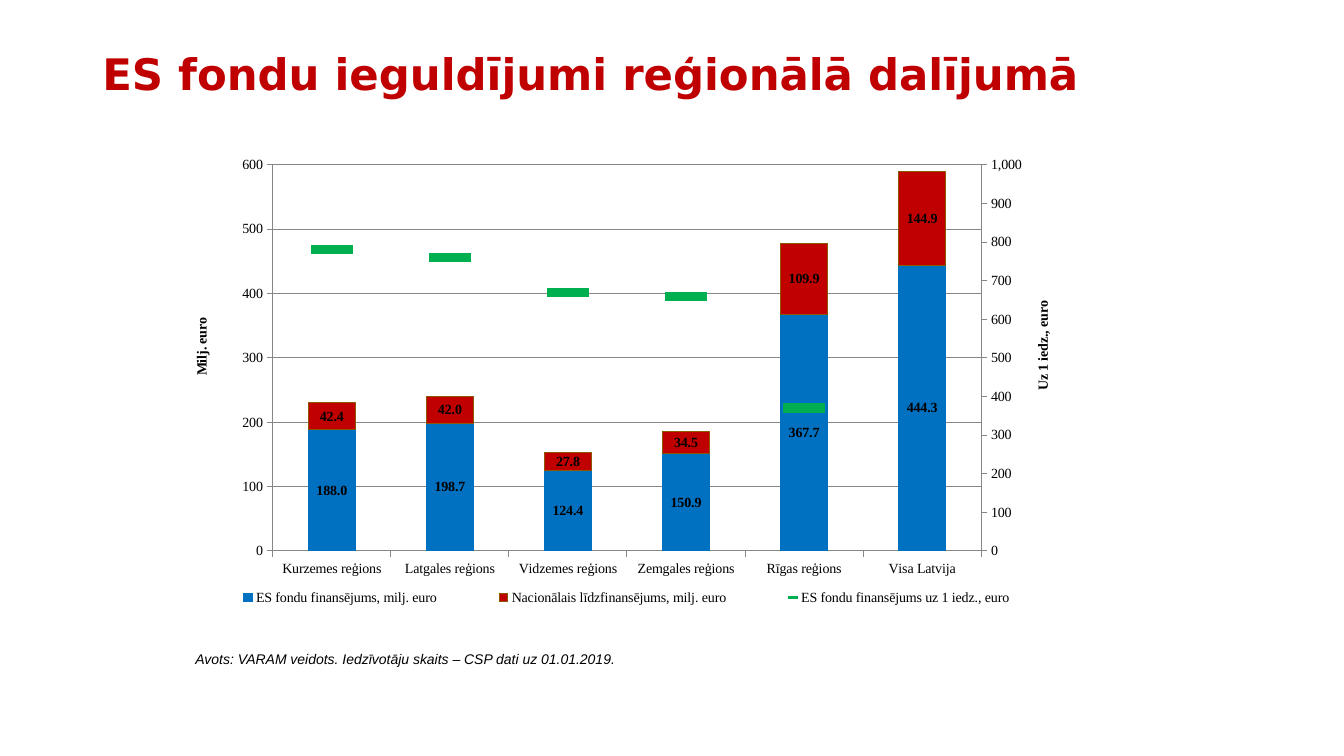
from copy import deepcopy
from dataclasses import dataclass

from lxml import etree
from pptx import Presentation
from pptx.chart import axis as ax
from pptx.chart.data import CategoryChartData
from pptx.dml.color import RGBColor
from pptx.enum import chart as ch, text
from pptx.oxml import parse_xml
from pptx.oxml.ns import nsdecls, qn
from pptx.util import Pt


@dataclass(frozen=True)
class Theme:
    red: RGBColor = RGBColor(0xC0, 0x00, 0x00)
    blue: RGBColor = RGBColor(0x00, 0x70, 0xC0)
    green: RGBColor = RGBColor(0x00, 0xB0, 0x50)
    brown: RGBColor = RGBColor(0x8B, 0x5A, 0x00)
    grey: RGBColor = RGBColor(0x86, 0x86, 0x86)
    black: RGBColor = RGBColor(0x00, 0x00, 0x00)
    title_size: int = 31
    body_size: int = 10
    title_font: str = "DejaVu Sans"
    chart_font: str = "Times New Roman"
    note_font: str = "Arial"


theme = Theme()
CHART_W, CHART_H = 630, 338


def write(tf, content, *, font, size=theme.body_size, color=theme.black,
          bold=False, italic=False, spacing=None):
    p = tf.paragraphs[0]
    p.line_spacing = spacing
    r = p.add_run()
    r.text = content
    r.font.name, r.font.size = font, Pt(size)
    r.font.bold, r.font.italic = bold, italic
    r.font.color.rgb = color


def place(element, index, **points):
    """Fix a chart part, in points within the chart; index is the layout's child position."""
    for old in element.findall(qn("c:layout")):
        element.remove(old)
    layout = etree.Element(qn("c:layout"))
    manual = etree.SubElement(layout, qn("c:manualLayout"))
    if element.tag == qn("c:plotArea"):
        etree.SubElement(manual, qn("c:layoutTarget"), val="inner")
    for mode in ("xMode", "yMode"):
        etree.SubElement(manual, qn(f"c:{mode}"), val="edge")
    for name, value in points.items():
        whole = CHART_W if name in "xw" else CHART_H
        etree.SubElement(manual, qn(f"c:{name}"), val=str(value / whole))
    element.insert(index, layout)


prs = Presentation()
prs.slide_width, prs.slide_height = Pt(960), Pt(540)
s = prs.slides.add_slide(prs.slide_layouts[6])

# Title and source note
title = s.shapes.add_textbox(Pt(66), Pt(29), Pt(828), Pt(104)).text_frame
title.margin_top = Pt(9)
note = s.shapes.add_textbox(Pt(132.5), Pt(461), Pt(362), Pt(32)).text_frame
for tf in (title, note):
    tf.word_wrap = True
    tf.vertical_anchor = text.MSO_ANCHOR.TOP
write(title, "ES fondu ieguldījumi reģionālā dalījumā", font=theme.title_font,
      size=theme.title_size, color=theme.red, bold=True, spacing=0.9)
write(note, "Avots: VARAM veidots. Iedzīvotāju skaits – CSP dati uz 01.01.2019.",
      font=theme.note_font, italic=True)

# Chart data
data = CategoryChartData(number_format="#,##0.0")
data.categories = ["Kurzemes reģions", "Latgales reģions", "Vidzemes reģions",
                   "Zemgales reģions", "Rīgas reģions", "Visa Latvija"]
data.add_series("ES fondu finansējums, milj. euro",
                [188.0, 198.7, 124.4, 150.9, 367.7, 444.3])
data.add_series("Nacionālais līdzfinansējums, milj. euro",
                [42.4, 42.0, 27.8, 34.5, 109.9, 144.9])
data.add_series("ES fondu finansējums uz 1 iedz., euro",
                [780, 760, 670, 660, 370, None])
chart = s.shapes.add_chart(ch.XL_CHART_TYPE.COLUMN_STACKED, Pt(132.5), Pt(105),
                           Pt(CHART_W), Pt(CHART_H), data).chart
chart.has_title = False
chart.font.name, chart.font.size = theme.chart_font, Pt(theme.body_size)
chart.font.color.rgb = theme.black

# Stacked columns
columns = chart.plots[0]
columns.gap_width, columns.overlap = 150, 100
columns.vary_by_categories = False
for series, fill, edge in zip(columns.series, (theme.blue, theme.red),
                              (theme.blue, theme.brown)):
    series.format.fill.solid()
    series.format.fill.fore_color.rgb = fill
    series.format.line.color.rgb = edge
    series.format.line.width = Pt(0.75)
    labels = series.data_labels
    labels.show_value = True
    labels.number_format, labels.number_format_is_linked = "#,##0.0", False
    labels.position = ch.XL_LABEL_POSITION.CENTER
    labels.font.bold = True
    labels.font.size, labels.font.name = Pt(theme.body_size), theme.chart_font
    labels.font.color.rgb = theme.black

# Secondary axes, made from the primary pair
plot_area = chart.element.find(".//" + qn("c:plotArea"))
bar = plot_area.find(qn("c:barChart"))
cat_xml, val_xml = plot_area.find(qn("c:catAx")), plot_area.find(qn("c:valAx"))
cat2_xml, val2_xml = deepcopy(cat_xml), deepcopy(val_xml)
for element, own, other in ((cat2_xml, "5001", "5002"), (val2_xml, "5002", "5001")):
    element.find(qn("c:axId")).set("val", own)
    element.find(qn("c:crossAx")).set("val", other)
val2_xml.find(qn("c:axPos")).set("val", "r")
val2_xml.find(qn("c:crosses")).set("val", "max")
val_xml.addnext(val2_xml)
val2_xml.addnext(cat2_xml)
ax.CategoryAxis(cat2_xml).visible = False

# Funding per inhabitant as dash markers on the right axis
line = parse_xml(f'<c:lineChart {nsdecls("c")}><c:grouping val="standard"/>'
                 '<c:varyColors val="0"/><c:marker val="1"/>'
                 '<c:axId val="5001"/><c:axId val="5002"/></c:lineChart>')
per_head = bar.findall(qn("c:ser"))[2]
for extra in per_head.findall(qn("c:invertIfNegative")):
    per_head.remove(extra)
line.insert(2, per_head)
bar.addnext(line)
dashes = chart.plots[1].series[0]
dashes.smooth = False
dashes.format.line.fill.background()
dashes.marker.style, dashes.marker.size = ch.XL_MARKER_STYLE.DASH, 29
dashes.marker.format.fill.solid()
dashes.marker.format.fill.fore_color.rgb = theme.green
dashes.marker.format.line.fill.background()

# Axes
left, right = ax.ValueAxis(val_xml), ax.ValueAxis(val2_xml)
for axis, name, top, fmt, x, y in (
        (left, "Milj. euro", 600, "0", 3, 120),
        (right, "Uz 1 iedz., euro", 1000, "#,##0", 604, 108)):
    axis.minimum_scale, axis.maximum_scale, axis.major_unit = 0, top, 100
    axis.tick_labels.number_format = fmt
    axis.tick_labels.number_format_is_linked = False
    axis.has_major_gridlines = axis is left
    write(axis.axis_title.text_frame, name, font=theme.chart_font, bold=True)
    body = axis.axis_title.text_frame._txBody.find(qn("a:bodyPr"))
    body.set("rot", "-5400000")
    body.set("vert", "horz")
    place(axis.axis_title._element, 1, x=x, y=y)
for axis in (chart.category_axis, left, right):
    axis.major_tick_mark = ch.XL_TICK_MARK.OUTSIDE
    axis.minor_tick_mark = ch.XL_TICK_MARK.NONE
    axis.format.line.color.rgb = theme.grey
    axis.format.line.width = Pt(0.75)
left.major_gridlines.format.line.color.rgb = theme.grey
left.major_gridlines.format.line.width = Pt(0.75)

# Legend and plot position
chart.has_legend = True
chart.legend.position = ch.XL_LEGEND_POSITION.BOTTOM
chart.legend.include_in_layout = False
place(chart.legend._element, 1, x=0, y=312, w=CHART_W, h=20)
place(plot_area, 0, x=62.4, y=12.8, w=506, h=275.8)

prs.save("out.pptx")
